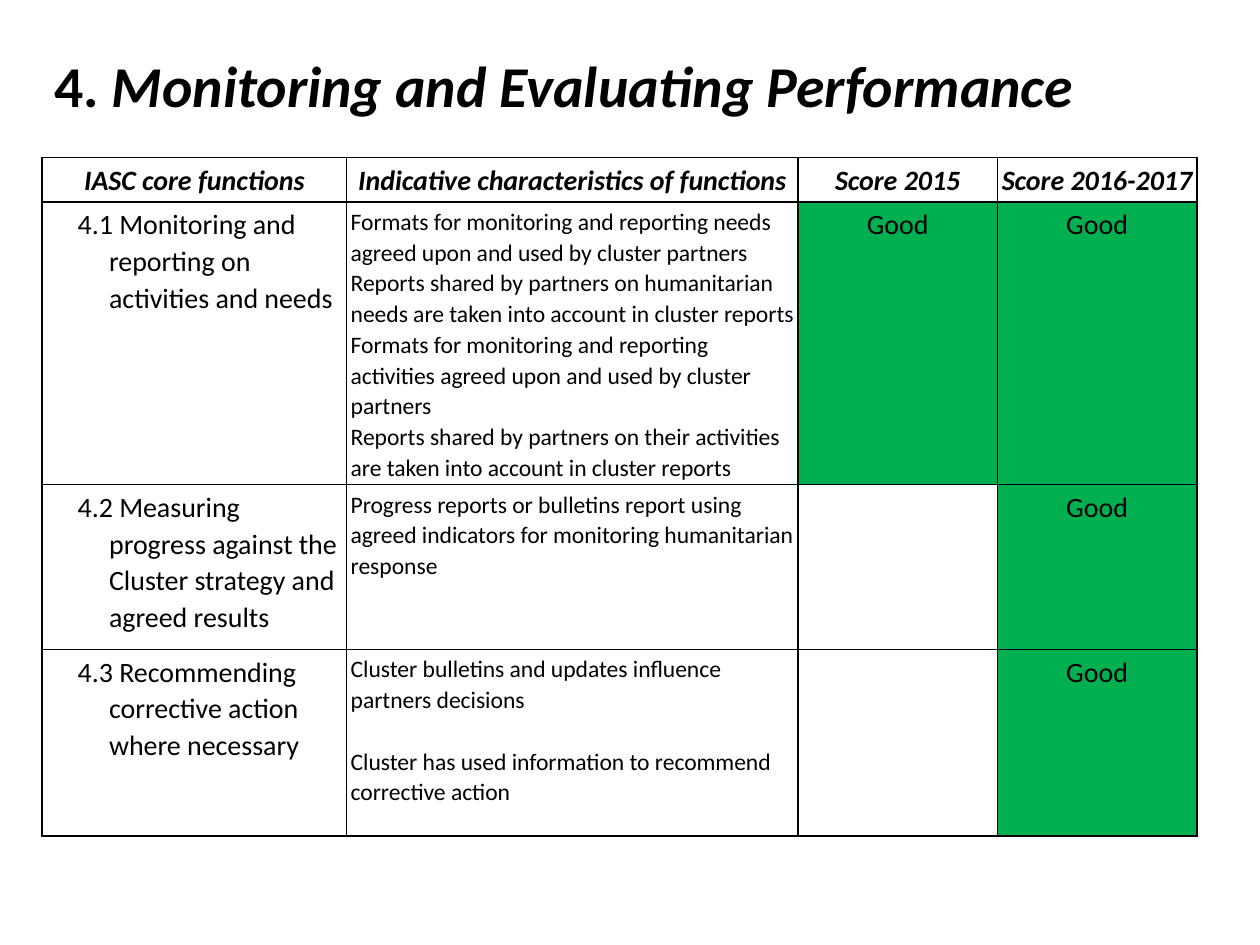
from lxml import etree
from pptx import Presentation
from pptx.dml.color import RGBColor
from pptx.enum import text
from pptx.oxml import ns
from pptx.util import Cm, Pt

BLACK = RGBColor(0x00, 0x00, 0x00)
GREEN = RGBColor(0x00, 0xB0, 0x50)
CENTER = text.PP_ALIGN.CENTER

COLUMN_WIDTHS = [6.14, 9.1, 4.02, 4.02]
ROW_HEIGHTS = [0.9, 5.7, 3.32, 3.76]
HEADERS = ["IASC core functions", "Indicative characteristics of functions",
           "Score 2015", "Score 2016-2017"]
# function, characteristics, gap between characteristics in points, scores
FUNCTIONS = [
    ("4.1 Monitoring and reporting on activities and needs",
     ["Formats for monitoring and reporting needs agreed upon and used by cluster partners",
      "Reports shared by partners on humanitarian needs are taken into account in cluster reports",
      "Formats for monitoring and reporting activities agreed upon and used by cluster partners",
      "Reports shared by partners on their activities are taken into account in cluster reports"],
     0, ["Good", "Good"]),
    ("4.2 Measuring progress against the Cluster strategy and agreed results",
     ["Progress reports or bulletins report using agreed indicators for monitoring "
      "humanitarian response"],
     0, ["", "Good"]),
    ("4.3 Recommending corrective action where necessary",
     ["Cluster bulletins and updates influence partners decisions",
      "Cluster has used information to recommend corrective action"],
     17.6, ["", "Good"]),
]


def add_run(p, content, size=16, bold=False, italic=False):
    r = p.add_run()
    r.text = content
    f = r.font
    f.name, f.size, f.bold, f.italic = "Calibri", Pt(size), bold, italic
    f.color.rgb = BLACK


def write(tf, paragraphs, align=None, gap=0, hanging=False, **font):
    for i, content in enumerate(paragraphs):
        p = tf.paragraphs[0] if i == 0 else tf.add_paragraph()
        if hanging:
            pPr = p._p.get_or_add_pPr()
            pPr.set("marL", str(Cm(1.27)))
            pPr.set("indent", str(-Cm(0.635)))
        p.alignment = align
        p.line_spacing = 1.07
        if i and gap:
            p.space_before = Pt(gap)
        add_run(p, content, **font)


def style_cell(cell, fill=None):
    """Give the cell thin margins, black borders and an optional fill."""
    cell.margin_left = cell.margin_right = Cm(0.08)
    cell.margin_top = cell.margin_bottom = Cm(0.08)
    tcPr = cell._tc.get_or_add_tcPr()
    for side in ("lnL", "lnR", "lnT", "lnB"):
        ln = etree.SubElement(tcPr, ns.qn(f"a:{side}"), w=str(Pt(1)))
        solid = etree.SubElement(ln, ns.qn("a:solidFill"))
        etree.SubElement(solid, ns.qn("a:srgbClr"), val=str(BLACK))
    if fill is None:
        cell.fill.background()
    else:
        cell.fill.solid()
        cell.fill.fore_color.rgb = fill


def add_title(s, left, top, width, height):
    tf = s.shapes.add_textbox(left, top, width, height).text_frame
    tf.word_wrap = True
    tf.vertical_anchor = text.MSO_ANCHOR.MIDDLE
    p = tf.paragraphs[0]
    p.line_spacing = 0.9
    add_run(p, "4. ", size=33, bold=True)
    add_run(p, "Monitoring and Evaluating Performance", size=33, bold=True, italic=True)


def add_score_table(s, left, top, width, height):
    table = s.shapes.add_table(len(ROW_HEIGHTS), len(COLUMN_WIDTHS),
                               left, top, width, height).table
    table.first_row = table.horz_banding = False
    for column, share in zip(table.columns, COLUMN_WIDTHS):
        column.width = int(width * share / sum(COLUMN_WIDTHS))
    for row, share in zip(table.rows, ROW_HEIGHTS):
        row.height = int(height * share / sum(ROW_HEIGHTS))

    for cell, header in zip(table.rows[0].cells, HEADERS):
        style_cell(cell)
        write(cell.text_frame, [header], align=CENTER, bold=True, italic=True)

    for i, (function, characteristics, gap, scores) in enumerate(FUNCTIONS, 1):
        name_cell, detail_cell, *score_cells = table.rows[i].cells
        style_cell(name_cell)
        write(name_cell.text_frame, [function], hanging=True)
        style_cell(detail_cell)
        write(detail_cell.text_frame, characteristics, gap=gap, size=13.5)
        for cell, score in zip(score_cells, scores):
            style_cell(cell, GREEN if score else None)
            if score:
                write(cell.text_frame, [score], align=CENTER)


def main():
    prs = Presentation()
    prs.slide_width, prs.slide_height = Cm(25.4), Cm(19.05)
    s = prs.slides.add_slide(prs.slide_layouts[6])
    add_title(s, Cm(0.84), Cm(0.84), Cm(22.81), Cm(1.9))
    add_score_table(s, Cm(0.85), Cm(3.17), Cm(sum(COLUMN_WIDTHS)), Cm(sum(ROW_HEIGHTS)))
    prs.save("out.pptx")


if __name__ == "__main__":
    main()
